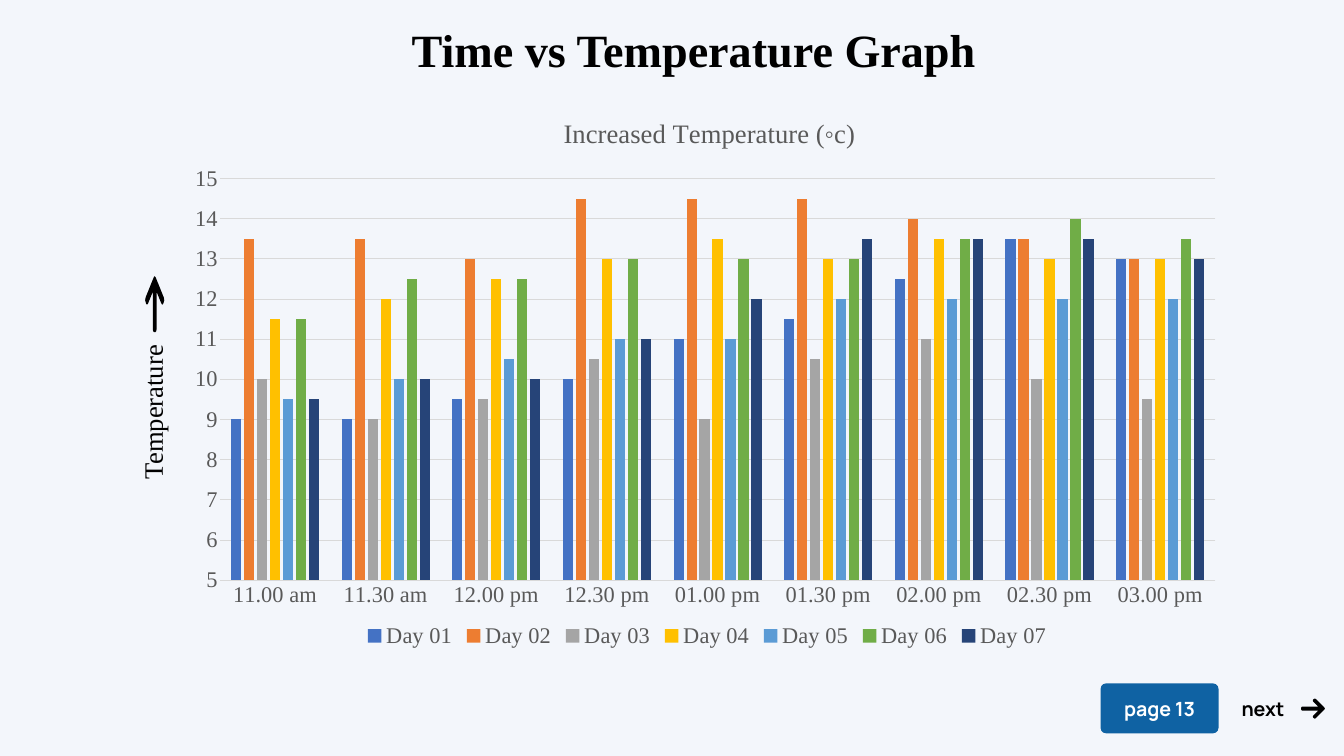
from lxml import etree
from pptx import Presentation
from pptx.chart.data import CategoryChartData
from pptx.dml.color import RGBColor
from pptx.enum.chart import XL_CHART_TYPE as CT, XL_LEGEND_POSITION as LP, XL_TICK_MARK as TM
from pptx.enum.shapes import MSO_SHAPE
from pptx.enum.text import MSO_ANCHOR, PP_ALIGN
from pptx.oxml.ns import qn
from pptx.util import Emu, Pt

PX = 9144
SERIF, SANS = "Times New Roman", "Manrope"
GREY, LIGHT, BLACK = "595959", "D9D9D9", "000000"
rgb = RGBColor.from_string


def box(*lengths):
    return [Emu(round(v * PX)) for v in lengths]


def style(font, size, color, name=SERIF, bold=False):
    font.size, font.name, font.bold = Pt(size), name, bold
    font.color.rgb = rgb(color)


prs = Presentation()
prs.slide_width, prs.slide_height = box(2667, 1500)
s = prs.slides.add_slide(prs.slide_layouts[5])
s.background.fill.solid()
s.background.fill.fore_color.rgb = rgb("F3F6FB")

title = s.shapes.title
title.left, title.top, title.width, title.height = box(671, 37, 1411, 121)
tf = title.text_frame
tf.text = "Time vs Temperature Graph"
tf.vertical_anchor = MSO_ANCHOR.TOP
p = tf.paragraphs[0]
p.alignment = PP_ALIGN.CENTER
style(p.runs[0].font, 66, BLACK, bold=True)

cd = CategoryChartData()
cd.categories = ["11.00 am", "11.30 am", "12.00 pm", "12.30 pm", "01.00 pm",
                 "01.30 pm", "02.00 pm", "02.30 pm", "03.00 pm"]
days = [
    ("4472C4", [9, 9, 9.5, 10, 11, 11.5, 12.5, 13.5, 13]),
    ("ED7D31", [13.5, 13.5, 13, 14.5, 14.5, 14.5, 14, 13.5, 13]),
    ("A5A5A5", [10, 9, 9.5, 10.5, 9, 10.5, 11, 10, 9.5]),
    ("FFC000", [11.5, 12, 12.5, 13, 13.5, 13, 13.5, 13, 13]),
    ("5B9BD5", [9.5, 10, 10.5, 11, 11, 12, 12, 12, 12]),
    ("70AD47", [11.5, 12.5, 12.5, 13, 13, 13, 13.5, 14, 13.5]),
    ("264478", [9.5, 10, 10, 11, 12, 13.5, 13.5, 13.5, 13]),
]
for n, (_, values) in enumerate(days, 1):
    cd.add_series(f"Day {n:02}", values)
chart = s.shapes.add_chart(CT.COLUMN_CLUSTERED, *box(352, 188, 2102, 1107), cd).chart
style(chart.font, 32, BLACK)

tf = chart.chart_title.text_frame
tf.text = "Increased Temperature (◦c)"
style(tf.paragraphs[0].runs[0].font, 38, GREY)

chart.has_legend = True
chart.legend.position = LP.BOTTOM
chart.legend.include_in_layout = False
style(chart.legend.font, 32, GREY)

plot = chart.plots[0]
plot.gap_width, plot.overlap, plot.vary_by_categories = 219, -27, False
for series, (color, _) in zip(plot.series, days):
    series.format.fill.solid()
    series.format.fill.fore_color.rgb = rgb(color)

cat, val = chart.category_axis, chart.value_axis
for axis in (cat, val):
    axis.major_tick_mark = axis.minor_tick_mark = TM.NONE
    style(axis.tick_labels.font, 32, GREY)
val.minimum_scale, val.maximum_scale, val.major_unit = 5, 15, 1
val.format.line.fill.background()
val.has_major_gridlines = True
for line in (cat.format.line, val.major_gridlines.format.line):
    line.color.rgb = rgb(LIGHT)
    line.width = Pt(0.75)

plot_area = chart._chartSpace.find(".//" + qn("c:plotArea"))
chart_title = chart._chartSpace.find(".//" + qn("c:title"))
for parent, index, settings in [
    (plot_area, 0, dict(layoutTarget="inner", xMode="edge", yMode="edge",
                        x=0.04, y=0.15, w=0.94, h=0.72)),
    (chart_title, 1, dict(xMode="edge", yMode="edge", x=0.36, y=0.03)),
]:
    for old in parent.findall(qn("c:layout")):
        parent.remove(old)
    layout = etree.Element(qn("c:layout"))
    manual = etree.SubElement(layout, qn("c:manualLayout"))
    for key, value in settings.items():
        etree.SubElement(manual, qn("c:" + key)).set("val", str(value))
    parent.insert(index, layout)

button = s.shapes.add_shape(MSO_SHAPE.ROUNDED_RECTANGLE, *box(2184, 1356, 234, 99))
button.adjustments[0] = 0.11
button.shadow.inherit = False
button.fill.solid()
button.fill.fore_color.rgb = rgb("0F62A3")
button.line.fill.background()

for text, area, size, color, name, bold, align, turn in [
    ("page 13", (2184, 1377, 234, 57), 28, "FFFFFF", SANS, True, PP_ALIGN.CENTER, 0),
    ("next", (2454, 1377, 172, 57), 28, BLACK, SANS, True, PP_ALIGN.LEFT, 0),
    ("Temperature", (35, 656, 535, 74), 38, BLACK, SERIF, False, PP_ALIGN.LEFT, 270),
]:
    label = s.shapes.add_textbox(*box(*area))
    label.rotation = turn
    tf = label.text_frame
    tf.word_wrap = True
    tf.text = text
    p = tf.paragraphs[0]
    p.alignment = align
    style(p.runs[0].font, size, color, name, bold)

half = [(0, 0), (0.02, 0.1), (0.38, 0.95), (0.43, 1), (0.49, 0.9), (0.51, 0.8),
        (0.49, 0.7), (0.28, 0.2), (0.94, 0.2), (0.98, 0.17), (1, 0.08)]
outline = half + [(along, -across) for along, across in half[:0:-1]]
for tip_x, tip_y, length, spread, upward in [
    (2629, 1406, 47, 20, False),
    (307, 548, 111, 19, True),
]:
    points = []
    for along, across in outline:
        a, c = along * length, across * spread
        points.append(box(tip_x + c, tip_y + a) if upward else box(tip_x - a, tip_y + c))
    builder = s.shapes.build_freeform(*points[0])
    builder.add_line_segments(points[1:], close=True)
    arrow = builder.convert_to_shape()
    arrow.shadow.inherit = False
    arrow.fill.solid()
    arrow.fill.fore_color.rgb = rgb(BLACK)
    arrow.line.fill.background()

prs.save("out.pptx")
